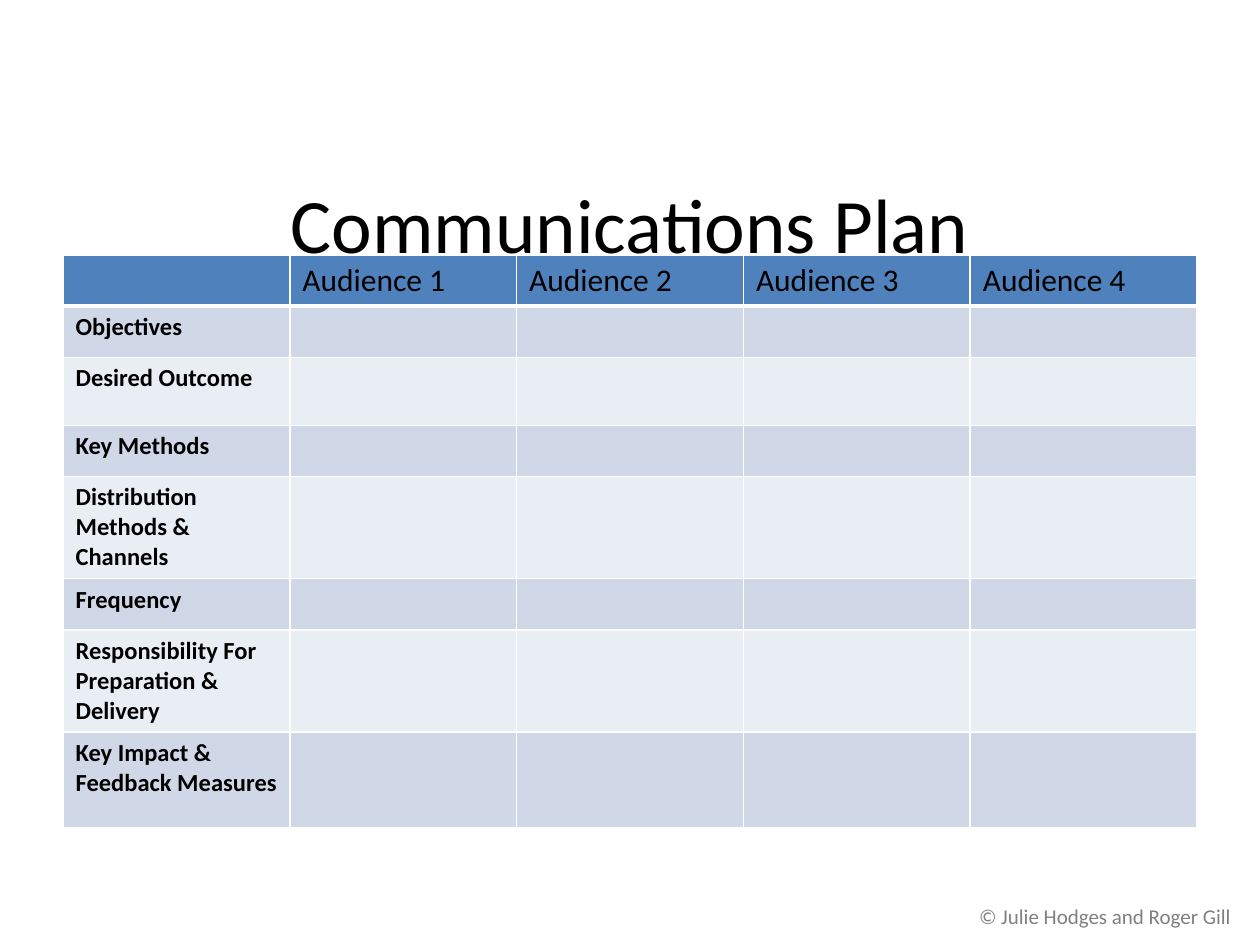
from lxml.etree import SubElement
from pptx import Presentation
from pptx.dml.color import RGBColor
from pptx.enum.text import MSO_ANCHOR, PP_ALIGN
from pptx.oxml.ns import qn
from pptx.util import Pt

HEADERS = ["", "Audience 1", "Audience 2", "Audience 3", "Audience 4"]
ROWS = [
    ("Objectives", 29.2),
    ("Desired Outcome", 38.88),
    ("Key Methods", 29.2),
    ("Distribution Methods & Channels", 58.5),
    ("Frequency", 29.2),
    ("Responsibility For Preparation & Delivery", 58.5),
    ("Key Impact & Feedback Measures", 54.72),
]
HEADER_HEIGHT = 29.2
HEADER_FILL = "4F81BD"
BAND_FILLS = ["D0D8E8", "E9EDF4"]


def color(hex_code):
    return RGBColor.from_string(hex_code)


def write_text(frame, text, size, hex_code="000000", bold=False, align=PP_ALIGN.LEFT):
    paragraph = frame.paragraphs[0]
    paragraph.alignment = align
    run = paragraph.add_run()
    run.text = text
    run.font.name = "Calibri"
    run.font.size = Pt(size)
    run.font.bold = bold
    run.font.color.rgb = color(hex_code)


def place(shape, left, top, width, height):
    shape.left, shape.top = Pt(left), Pt(top)
    shape.width, shape.height = Pt(width), Pt(height)


def fill_cell(cell, fill, bottom_width=1):
    """Give the cell a plain fill and white borders."""
    properties = cell._tc.get_or_add_tcPr()
    for side, width in (("L", 1), ("R", 1), ("T", 1), ("B", bottom_width)):
        line = SubElement(properties, qn(f"a:ln{side}"), w=str(Pt(width)))
        solid = SubElement(line, qn("a:solidFill"))
        SubElement(solid, qn("a:srgbClr"), val="FFFFFF")
    cell.fill.solid()
    cell.fill.fore_color.rgb = color(fill)


def add_title(slide, left, top, width, height):
    title = slide.shapes.title
    place(title, left, top, width, height)
    title.text_frame.vertical_anchor = MSO_ANCHOR.MIDDLE
    write_text(title.text_frame, "Communications Plan", 44, align=PP_ALIGN.CENTER)


def add_plan_table(slide, left, top, width):
    heights = [HEADER_HEIGHT] + [height for _, height in ROWS]
    table = slide.shapes.add_table(
        len(heights), len(HEADERS), Pt(left), Pt(top), Pt(width), Pt(sum(heights))
    ).table
    table.first_row = table.horz_banding = False
    for column in table.columns:
        column.width = Pt(width / len(HEADERS))
    for row, height in zip(table.rows, heights):
        row.height = Pt(height)

    for index, header in enumerate(HEADERS):
        cell = table.cell(0, index)
        fill_cell(cell, HEADER_FILL, bottom_width=3)
        if header:
            write_text(cell.text_frame, header, 18)
    for index, (label, _) in enumerate(ROWS):
        cells = table.rows[index + 1].cells
        for cell in cells:
            fill_cell(cell, BAND_FILLS[index % 2])
        write_text(cells[0].text_frame, label, 14, bold=True)


def add_copyright(slide, left, top, width, height):
    box = slide.shapes.add_textbox(Pt(left), Pt(top), Pt(width), Pt(height))
    box.text_frame.word_wrap = True
    write_text(box.text_frame, "© Julie Hodges and Roger Gill", 12,
               hex_code="808080", align=PP_ALIGN.RIGHT)


def main():
    presentation = Presentation()
    presentation.slide_width, presentation.slide_height = Pt(720), Pt(540)
    slide = presentation.slides.add_slide(presentation.slide_layouts[5])
    add_title(slide, 36, 82, 648, 90)
    add_plan_table(slide, 36, 145.75, 648)
    add_copyright(slide, 476.5, 512.75, 234, 21.8)
    presentation.save("out.pptx")


if __name__ == "__main__":
    main()
